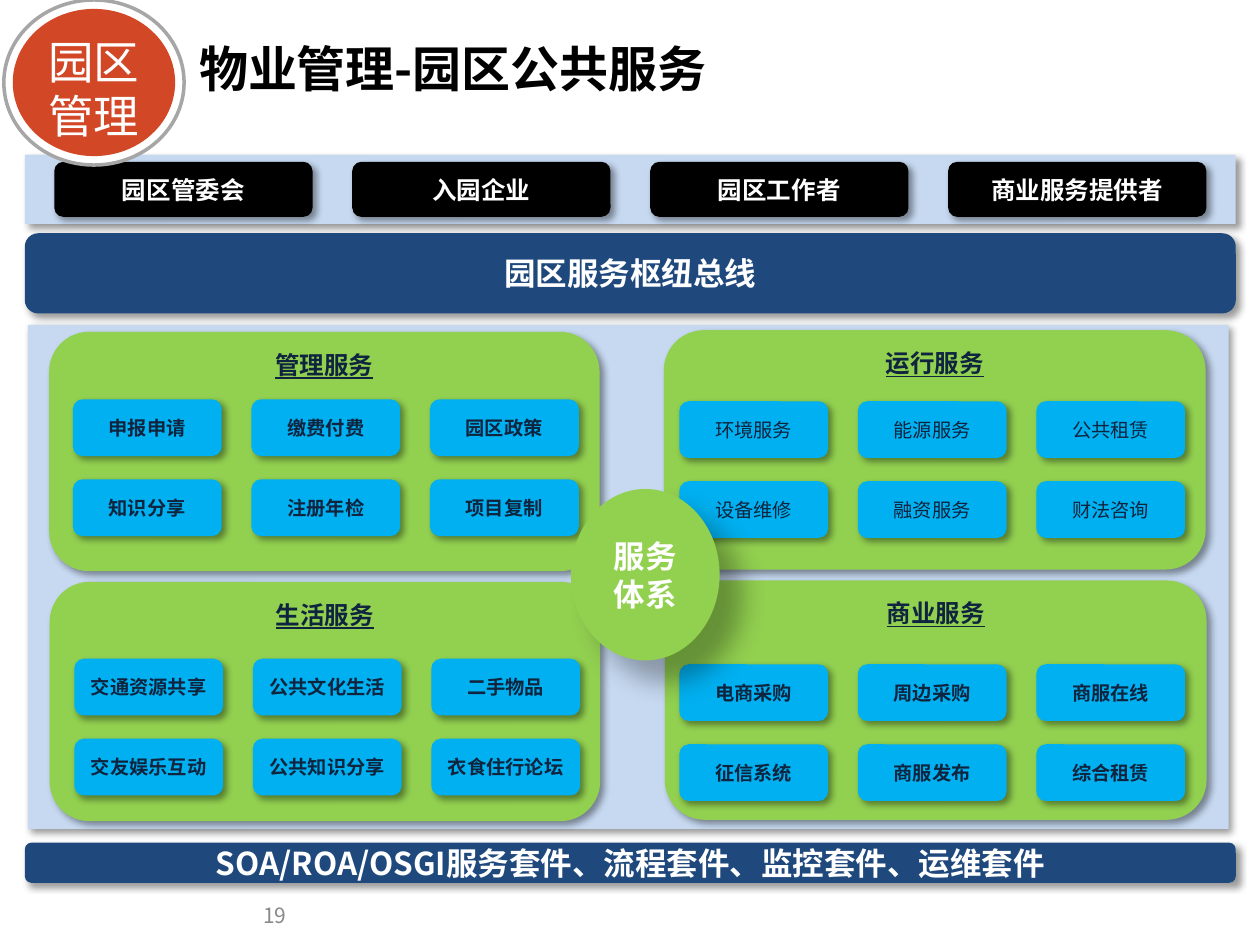
from lxml import etree
from pptx import Presentation
from pptx.dml.color import RGBColor
from pptx.enum.shapes import MSO_SHAPE
from pptx.enum.text import MSO_ANCHOR, MSO_AUTO_SIZE, PP_ALIGN
from pptx.oxml.ns import qn
from pptx.util import Pt

RECT, ROUNDED = MSO_SHAPE.RECTANGLE, MSO_SHAPE.ROUNDED_RECTANGLE
ROLE_BOX, OVAL = MSO_SHAPE.FLOWCHART_ALTERNATE_PROCESS, MSO_SHAPE.OVAL
LEFT, CENTER, RIGHT = PP_ALIGN.LEFT, PP_ALIGN.CENTER, PP_ALIGN.RIGHT
TOP, MIDDLE = MSO_ANCHOR.TOP, MSO_ANCHOR.MIDDLE
NO_AUTOFIT = MSO_AUTO_SIZE.NONE

FONT = "Noto Sans CJK SC"
BLACK = RGBColor(0x00, 0x00, 0x00)
WHITE = RGBColor(0xFF, 0xFF, 0xFF)
GRAY = RGBColor(0x89, 0x89, 0x89)
RING = RGBColor(0xA6, 0xA6, 0xA6)
PALE_BLUE = RGBColor(0xC6, 0xD9, 0xF1)
NAVY = RGBColor(0x1F, 0x49, 0x7D)
GREEN = RGBColor(0x92, 0xD0, 0x50)
SKY = RGBColor(0x00, 0xB0, 0xF0)
INK = RGBColor(0x0F, 0x24, 0x3E)
ORANGE = RGBColor(0xD2, 0x47, 0x26)

# Shadow: opacity %, blur, distance
SOFT = (40, 4, 3)
DEEP = (30, 15, 18)

ROLES = ["园区管委会", "入园企业", "园区工作者", "商业服务提供者"]
# Heading, panel box, offset of the tiles in the panel, bold tiles, tile names by row
PANELS = [
    ("管理服务", (28.1, 189.6, 314.6, 136.8), (13.6, 38.6), True,
     ["申报申请", "缴费付费", "园区政策", "知识分享", "注册年检", "项目复制"]),
    ("运行服务", (379.4, 188.7, 309.6, 136.8), (8.8, 40.6), False,
     ["环境服务", "能源服务", "公共租赁", "设备维修", "融资服务", "财法咨询"]),
    ("生活服务", (28.4, 332.5, 314.6, 136.8), (14.1, 43.9), True,
     ["交通资源共享", "公共文化生活", "二手物品", "交友娱乐互动", "公共知识分享", "衣食住行论坛"]),
    ("商业服务", (379.9, 331.7, 309.6, 136.8), (8.3, 47.9), True,
     ["电商采购", "周边采购", "商服在线", "征信系统", "商服发布", "综合租赁"]),
]
TILE_COLUMNS, TILE_SIZE, TILE_PITCH = 3, (85, 32.4), (102, 45.7)


def write(frame, text, size, color, bold=False, underline=False, align=CENTER, anchor=MIDDLE):
    frame.text = text
    frame.vertical_anchor = anchor
    for paragraph in frame.paragraphs:
        paragraph.alignment = align
        for run in paragraph.runs:
            font = run.font
            font.name, font.size, font.bold = FONT, Pt(size), bold
            font.underline = underline
            font.color.rgb = color
            east_asian = etree.Element(qn("a:ea"), typeface=FONT)
            run._r.rPr.find(qn("a:latin")).addnext(east_asian)


def add_block(shapes, kind, box, fill, shadow=None):
    block = shapes.add_shape(kind, *map(Pt, box))
    block.fill.solid()
    block.fill.fore_color.rgb = fill
    block.line.fill.background()
    block.shadow.inherit = False
    if shadow:
        opacity, blur, distance = shadow
        effects = block._element.spPr.find(qn("a:effectLst"))
        outer = etree.SubElement(
            effects, qn("a:outerShdw"), blurRad=str(Pt(blur)), dist=str(Pt(distance)),
            dir=str(45 * 60000), algn="tl", rotWithShape="0")
        tint = etree.SubElement(outer, qn("a:srgbClr"), val=str(BLACK))
        etree.SubElement(tint, qn("a:alpha"), val=str(opacity * 1000))
    return block


def add_title(slide, box):
    title = slide.shapes.title
    title.left, title.top, title.width, title.height = map(Pt, box)
    write(title.text_frame, "物业管理-园区公共服务", 28, BLACK, bold=True, align=LEFT)
    title.text_frame.auto_size = NO_AUTOFIT


def add_page_number(slide, box):
    number = slide.shapes.add_textbox(*map(Pt, box))
    number.text_frame.word_wrap = True
    write(number.text_frame, "19", 12, GRAY, align=RIGHT)


def add_role_strip(shapes, box):
    left, top, width, height = box
    add_block(shapes, RECT, box, PALE_BLUE, SOFT)
    side, role_width, role_height = 16.8, 147.6, 31.5
    pitch = (width - 2 * side - role_width) / (len(ROLES) - 1)
    for i, name in enumerate(ROLES):
        role = add_block(
            shapes, ROLE_BOX,
            (left + side + i * pitch, top + (height - role_height) / 2, role_width, role_height),
            BLACK, SOFT)
        write(role.text_frame, name, 14, WHITE, bold=True)


def add_bar(shapes, box, text):
    bar = add_block(shapes, ROUNDED, box, NAVY, SOFT)
    write(bar.text_frame, text, 18, WHITE, bold=True)


def add_service_panel(shapes, box, heading, offset, bold, services):
    panel = add_block(shapes, ROUNDED, box, GREEN, SOFT)
    write(panel.text_frame, heading, 14, INK, bold=True, underline=True, anchor=TOP)
    for i, service in enumerate(services):
        row, column = divmod(i, TILE_COLUMNS)
        left = box[0] + offset[0] + column * TILE_PITCH[0]
        top = box[1] + offset[1] + row * TILE_PITCH[1]
        tile = add_block(shapes, ROUNDED, (left, top, *TILE_SIZE), SKY, SOFT)
        tile.text_frame.margin_left = tile.text_frame.margin_right = 0
        write(tile.text_frame, service, 11, INK, bold=bold)


def add_service_system(shapes, box):
    """Draw the backdrop, the four service panels and the hub between them."""
    left, top, width, height = box
    add_block(shapes, RECT, box, PALE_BLUE, SOFT)
    for heading, panel_box, offset, bold, services in PANELS:
        add_service_panel(shapes, panel_box, heading, offset, bold, services)
    hub = add_block(shapes, OVAL, (left + 310.2, top + 93.7, 85, 98), GREEN, DEEP)
    write(hub.text_frame, "服务\n体系", 18, WHITE, bold=True)


def add_badge(shapes, box):
    left, top, width, height = box
    ring = add_block(shapes, OVAL, box, WHITE)
    ring.line.color.rgb = RING
    ring.line.width = Pt(2)
    inset = 5.1
    add_block(shapes, OVAL,
              (left + inset, top + inset, width - 2 * inset, height - 2 * inset), ORANGE)
    label = shapes.add_textbox(Pt(left + 18), Pt(top + 15.8), Pt(67), Pt(70.6))
    label.text_frame.word_wrap = False
    write(label.text_frame, "园区\n管理", 26, WHITE, anchor=TOP)


def main():
    prs = Presentation()
    prs.slide_width, prs.slide_height = Pt(720), Pt(540)
    slide = prs.slides.add_slide(prs.slide_layouts[5])
    add_title(slide, (106.6, 0, 575.3, 78))
    add_page_number(slide, (2.9, 508.3, 167.8, 28.8))
    diagram = slide.shapes.add_group_shape().shapes
    add_role_strip(diagram, (14.2, 88.4, 692, 39.6))
    add_bar(diagram, (14.2, 133.3, 692, 45.8), "园区服务枢纽总线")
    add_service_system(diagram, (16, 185.7, 686.2, 288))
    add_bar(diagram, (14.2, 481.5, 692, 23), "SOA/ROA/OSGI服务套件、流程套件、监控套件、运维套件")
    add_badge(slide.shapes.add_group_shape().shapes, (2.2, 0, 103, 94.3))
    prs.save("out.pptx")


if __name__ == "__main__":
    main()
